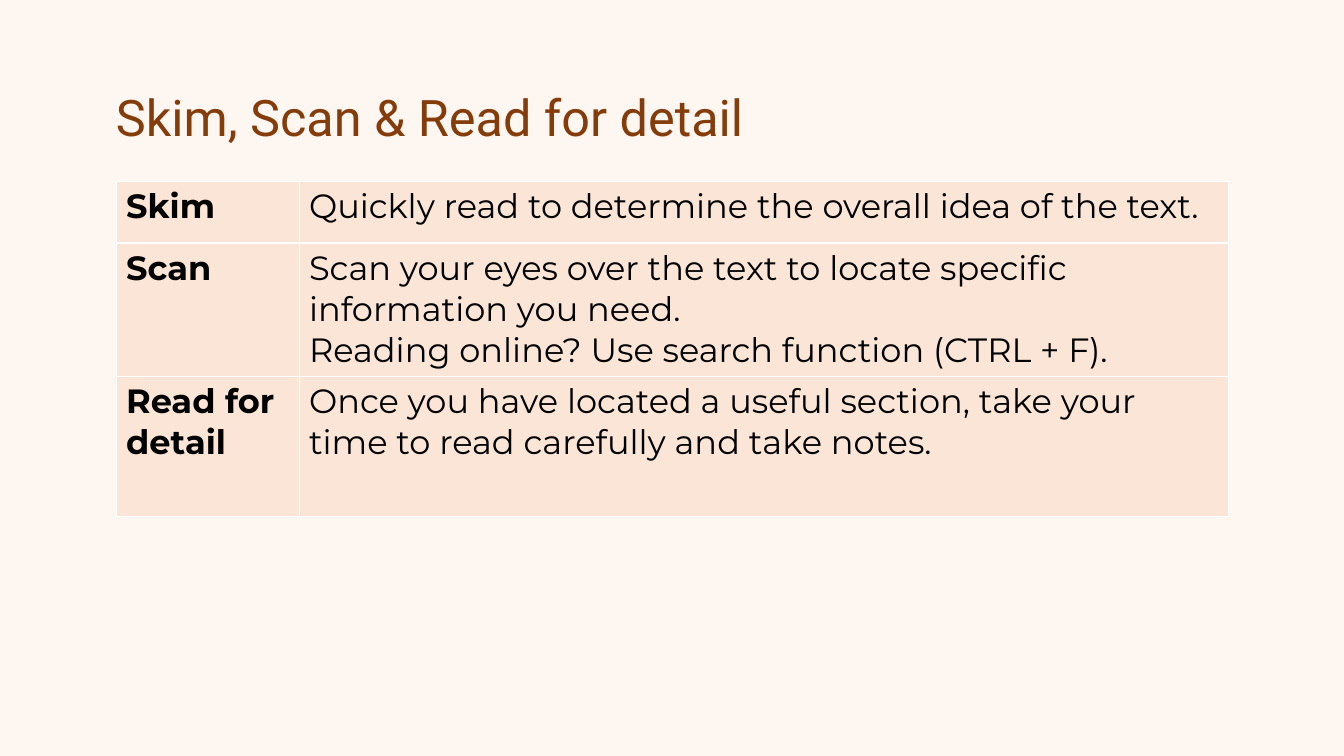
import pptx
import pptx.dml.color
import pptx.enum.text
import pptx.oxml
import pptx.oxml.ns
import pptx.util

PX = 914400 / 100.8  # EMU in one px

STRATEGIES = [
    ("Skim", ["Quickly read to determine the overall idea of the text."]),
    ("Scan", ["Scan your eyes over the text to locate specific information you need.",
              "Reading online? Use search function (CTRL + F)."]),
    ("Read for detail", ["Once you have located a useful section, take your",
                         "time to read carefully and take notes."]),
]


def px(length):
    return pptx.util.Emu(round(length * PX))


def color(hex_string):
    return pptx.dml.color.RGBColor.from_string(hex_string)


def write(paragraph, text, *, font, size, ink, bold=False, line=None):
    paragraph.alignment = pptx.enum.text.PP_ALIGN.LEFT
    if line:
        paragraph.line_spacing = pptx.util.Pt(line)
    run = paragraph.add_run()
    run.text = text
    run.font.name = font
    run.font.size = pptx.util.Pt(size)
    run.font.bold = bold
    run.font.color.rgb = color(ink)


class ReadingSlide:
    background = "FEF6F0"
    cell_fill = "FBE5D6"
    rule = "FFFFFF"
    heading = dict(font="Roboto", size=36, ink="843C0B", line=42)
    body = dict(font="Montserrat", size=24, ink="000000")

    def __init__(self, presentation):
        self.slide = presentation.slides.add_slide(presentation.slide_layouts[5])
        fill = self.slide.background.fill
        fill.solid()
        fill.fore_color.rgb = color(self.background)

    def title(self, text, left, top, width, height):
        title = self.slide.shapes.title
        title.left, title.top, title.width, title.height = map(px, (left, top, width, height))
        frame = title.text_frame
        frame.margin_left = frame.margin_top = frame.margin_right = frame.margin_bottom = 0
        frame.vertical_anchor = pptx.enum.text.MSO_ANCHOR.TOP
        frame.auto_size = pptx.enum.text.MSO_AUTO_SIZE.NONE
        frame.word_wrap = True
        write(frame.paragraphs[0], text, **self.heading)

    def borders(self, cell, **widths):
        properties = cell._tc.get_or_add_tcPr()
        for side in "LRTB":
            width = pptx.util.Pt(widths.get(side, 0.5))
            properties.append(pptx.oxml.parse_xml(
                f'<a:ln{side} {pptx.oxml.ns.nsdecls("a")} w="{width}"><a:solidFill>'
                f'<a:srgbClr val="{self.rule}"/></a:solidFill></a:ln{side}>'))

    def cell(self, cell, lines, bold, **widths):
        self.borders(cell, **widths)
        cell.fill.solid()
        cell.fill.fore_color.rgb = color(self.cell_fill)
        frame = cell.text_frame
        for index, line in enumerate(lines):
            paragraph = frame.add_paragraph() if index else frame.paragraphs[0]
            write(paragraph, line, bold=bold, **self.body)

    def table(self, rows, left, top, column_widths, row_heights):
        table = self.slide.shapes.add_table(
            len(rows), len(column_widths), px(left), px(top),
            px(sum(column_widths)), px(sum(row_heights))).table
        table.first_row = table.horz_banding = False
        for column, width in zip(table.columns, column_widths):
            column.width = px(width)
        for row, height in zip(table.rows, row_heights):
            row.height = px(height)
        # The rule under the first row is heavier
        heavy_rules = {0: {"B": 1}, 1: {"T": 1}}
        for index, (name, advice) in enumerate(rows):
            widths = heavy_rules.get(index, {})
            self.cell(table.cell(index, 0), [name], True, **widths)
            self.cell(table.cell(index, 1), advice, False, **widths)


def main():
    presentation = pptx.Presentation()
    presentation.slide_width, presentation.slide_height = px(1344), px(756)
    reading = ReadingSlide(presentation)
    # Heading
    reading.title("Skim, Scan & Read for detail", 116, 88, 1046, 76)
    # Reading strategies
    reading.table(STRATEGIES, 116, 181, [183, 929], [62, 133, 140])
    presentation.save("out.pptx")


if __name__ == "__main__":
    main()
